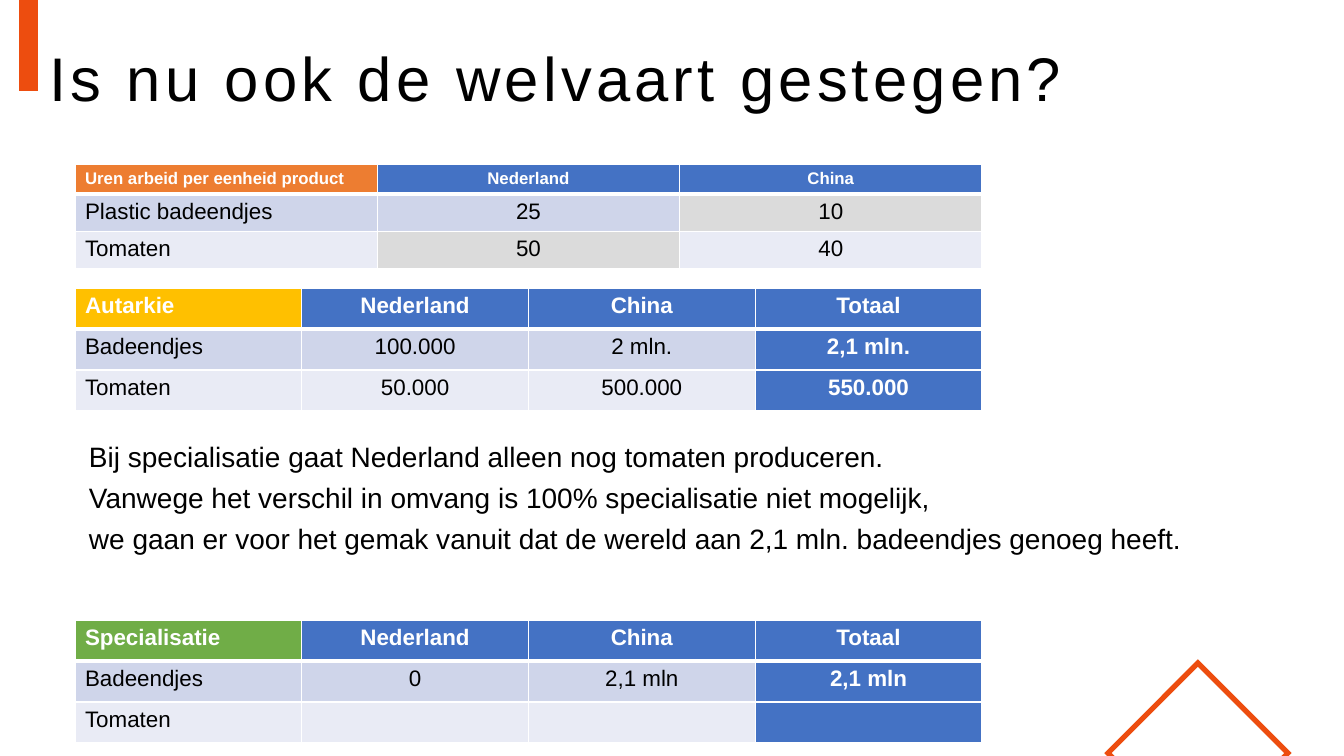
from lxml import etree
from pptx import Presentation
from pptx.dml.color import RGBColor
from pptx.enum.shapes import MSO_SHAPE as Shape
from pptx.enum.text import MSO_ANCHOR as Anchor, MSO_AUTO_SIZE as AutoSize, PP_ALIGN as Align
from pptx.oxml import parse_xml
from pptx.oxml.ns import nsdecls, qn
from pptx.util import Emu, Pt

PX_PER_INCH = 100.8
BLACK, WHITE, ORANGE, BLUE = "000000", "FFFFFF", "ED4D0F", "4472C4"
BANDS, GREY = ("CFD5EA", "E9EBF5"), "DBDBDB"


def px(*lengths):
    """Turn pixel lengths into a list of EMU."""
    return [Emu(round(length * 914400 / PX_PER_INCH)) for length in lengths]


def rgb(hex_colour):
    return RGBColor.from_string(hex_colour)


def set_font(paragraph, size, colour, bold=False):
    font = paragraph.font
    font.name, font.size, font.bold = "Arial", Pt(size), bold
    font.color.rgb = rgb(colour)


def add_bar(slide, box):
    bar = slide.shapes.add_shape(Shape.RECTANGLE, *px(*box))
    bar.shadow.inherit = False
    bar.fill.solid()
    bar.fill.fore_color.rgb = rgb(ORANGE)
    bar.line.fill.background()


def add_corner_diamond(slide, box):
    """Draw the diamond outline that is cut off by the bottom of the slide."""
    left, top, width, height = box
    half, cut = width // 2, height - width // 2
    right, bottom = left + width, top + height
    builder = slide.shapes.build_freeform(*px(right - cut, bottom), scale=1.0)
    corners = [(left + cut, bottom), (left, top + half), (left + half, top), (right, top + half)]
    builder.add_line_segments([px(*corner) for corner in corners], close=True)
    diamond = builder.convert_to_shape()
    diamond.shadow.inherit = False
    diamond.fill.background()
    diamond.line.color.rgb = rgb(ORANGE)
    diamond.line.width = Pt(3.75)
    etree.SubElement(diamond.line._get_or_add_ln(), qn("a:miter"), lim="800000")


def fill_title(slide, box, text):
    title = slide.shapes.title
    title.left, title.top, title.width, title.height = px(*box)
    frame = title.text_frame
    frame.text = text
    frame.word_wrap, frame.auto_size = True, AutoSize.NONE
    frame.vertical_anchor = Anchor.TOP
    frame.margin_top = px(9)[0]
    paragraph = frame.paragraphs[0]
    paragraph.alignment, paragraph.line_spacing = Align.LEFT, 0.9
    set_font(paragraph, 44, BLACK)
    paragraph.runs[0].font._element.set("spc", "300")


def add_explanation(slide, box, lines):
    frame = slide.shapes.add_textbox(*px(*box)).text_frame
    frame.word_wrap = True
    frame.text = "\n".join(lines)
    for paragraph in frame.paragraphs:
        paragraph.space_before = Pt(5)
        set_font(paragraph, 20, BLACK)


def add_borders(cell, row):
    """Draw white cell borders, with a thick line below the header row."""
    widths = {"L": 1, "R": 1, "T": 3 if row == 1 else 1, "B": 3 if row == 0 else 1}
    for side, width in widths.items():
        cell._tc.get_or_add_tcPr().append(parse_xml(
            f'<a:ln{side} {nsdecls("a")} w="{Pt(width)}"><a:solidFill>'
            f'<a:srgbClr val="{WHITE}"/></a:solidFill></a:ln{side}>'))


def add_production_table(slide, box, rows, corner, row_heights, header_size=16, grey_cells=()):
    """Fill a table whose header and Totaal column are white on blue."""
    table = slide.shapes.add_table(len(rows), len(rows[0]), *px(*box)).table
    for table_row, height in zip(table.rows, px(*row_heights)):
        table_row.height = height
    for r, texts in enumerate(rows):
        for c, text in enumerate(texts):
            cell = table.cell(r, c)
            strong = r == 0 or rows[0][c] == "Totaal"
            if (r, c) == (0, 0):
                colour = corner
            elif strong:
                colour = BLUE
            else:
                colour = GREY if (r, c) in grey_cells else BANDS[(r - 1) % 2]
            add_borders(cell, r)
            cell.fill.solid()
            cell.fill.fore_color.rgb = rgb(colour)
            cell.text = text
            paragraph = cell.text_frame.paragraphs[0]
            paragraph.alignment = Align.CENTER if c else Align.LEFT
            set_font(paragraph, 16 if r else header_size, WHITE if strong else BLACK, strong)


def build_welfare_slide(presentation):
    slide = presentation.slides.add_slide(presentation.slide_layouts[5])
    add_bar(slide, (19, -25, 19, 116))
    add_corner_diamond(slide, (1108, 663, 180, 99))
    add_explanation(slide, (79, 435, 1149, 172), [
        "Bij specialisatie gaat Nederland alleen nog tomaten produceren.",
        "Vanwege het verschil in omvang is 100% specialisatie niet mogelijk,",
        "we gaan er voor het gemak vanuit dat de wereld aan 2,1 mln. badeendjes genoeg heeft.",
    ])
    add_production_table(slide, (75, 164, 907, 99), [
        ("Uren arbeid per eenheid product", "Nederland", "China"),
        ("Plastic badeendjes", "25", "10"),
        ("Tomaten", "50", "40"),
    ], "ED7D31", (29, 35, 35), header_size=12, grey_cells={(1, 2), (2, 1)})
    add_production_table(slide, (75, 288, 907, 123), [
        ("Autarkie", "Nederland", "China", "Totaal"),
        ("Badeendjes", "100.000", "2 mln.", "2,1 mln."),
        ("Tomaten", "50.000", "500.000", "550.000"),
    ], "FFC000", (41, 41, 41))
    add_production_table(slide, (75, 620, 907, 123), [
        ("Specialisatie", "Nederland", "China", "Totaal"),
        ("Badeendjes", "0", "2,1 mln", "2,1 mln"),
        ("Tomaten", "", "", ""),
    ], "70AD47", (41, 41, 41))
    fill_title(slide, (39, 39, 1271, 146), "Is nu ook de welvaart gestegen?")


def main():
    presentation = Presentation()
    presentation.slide_width, presentation.slide_height = px(1344, 756)
    build_welfare_slide(presentation)
    presentation.save("out.pptx")


if __name__ == "__main__":
    main()
